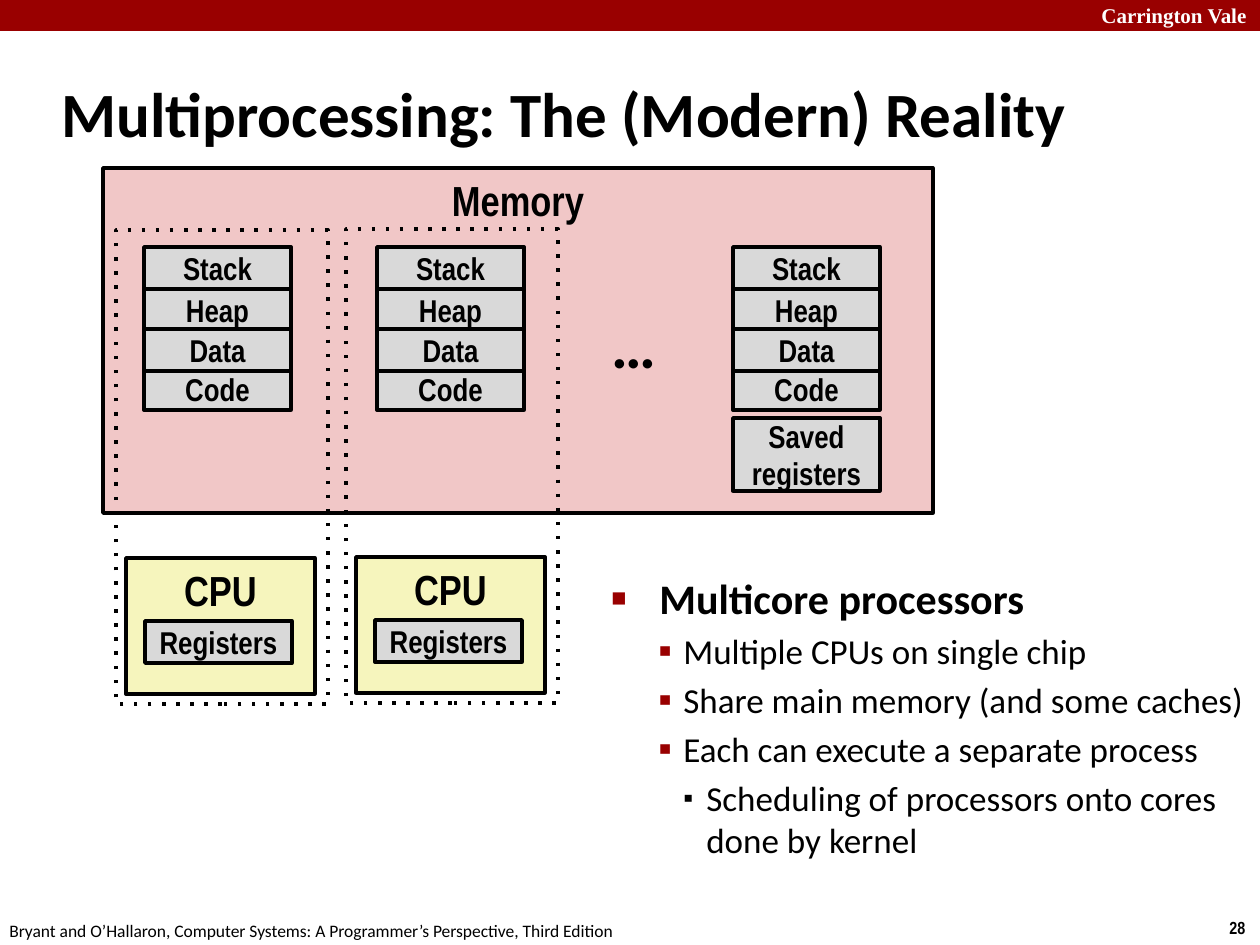
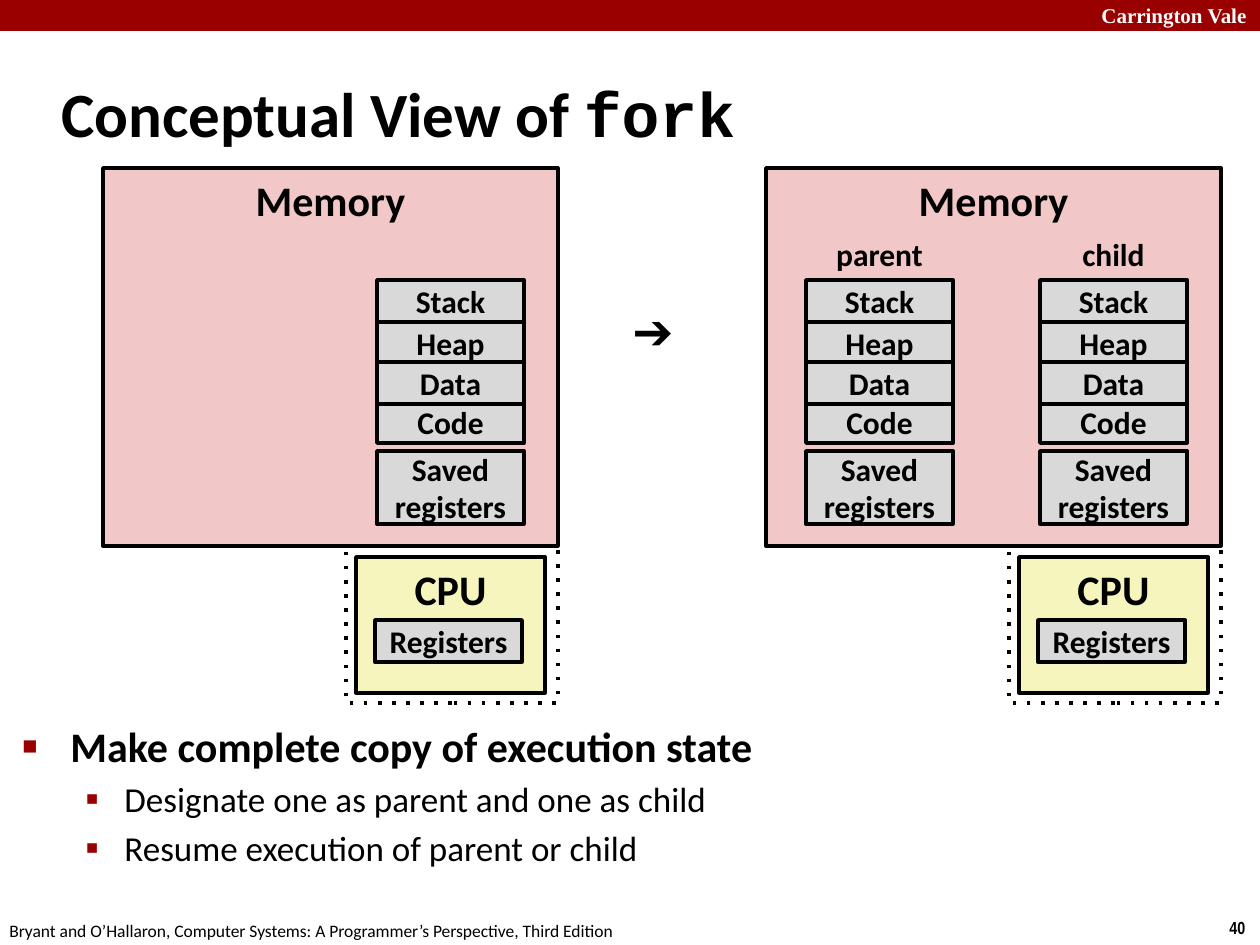
from dataclasses import dataclass

from lxml.etree import SubElement
from pptx import Presentation
from pptx.dml.color import RGBColor
from pptx.enum.shapes import MSO_SHAPE
from pptx.enum.text import MSO_ANCHOR, PP_ALIGN
from pptx.oxml.ns import qn
from pptx.util import Pt

EMU_PER_PX = 914400 / 126


@dataclass(frozen=True)
class Theme:
    """Colours, fonts and type sizes shared by the slides."""
    band: str = "990000"
    ink: str = "000000"
    paper: str = "FFFFFF"
    memory: str = "F1C7C7"
    cpu: str = "F6F5BD"
    segment: str = "D9D9D9"
    body_font: str = "Calibri"
    narrow_font: str = "Arial Narrow"
    code_font: str = "Courier New"
    band_font: str = "Times New Roman"
    symbol_font: str = "Arial"
    title_size: int = 36
    heading_size: int = 24
    item_size: int = 20
    label_size: int = 18
    arrow_size: int = 28
    band_size: int = 12
    footer_size: int = 10
    line_width: int = 2


@dataclass(frozen=True)
class Box:
    """A rectangle in px."""
    left: int
    top: int
    width: int
    height: int

    def inner(self, left, top, width, height):
        """Return a box placed relative to this one."""
        return Box(self.left + left, self.top + top, width, height)

    def emu(self):
        """Return left, top, width and height in EMU."""
        return [px(n) for n in (self.left, self.top, self.width, self.height)]


@dataclass(frozen=True)
class BulletStyle:
    """Look of one bullet level; margin and hang are in px."""
    symbol: str
    percent: int
    color: str
    size: int
    bold: bool
    margin: int
    hang: int


THEME = Theme()
PAGE = Box(0, 0, 1260, 945)
FOOTER = ("Bryant and O’Hallaron, Computer Systems: "
          "A Programmer’s Perspective, Third Edition")
SEGMENT_WIDTH, SEGMENT_HEIGHT = 147, 42
SEGMENT_OFFSETS = {"Stack": 0, "Heap": 42, "Code": 121, "Data": 82}
SAVED_OFFSET, SAVED_HEIGHT = 171, 73
CORE_SIZE = (212, 474)


def px(length):
    """Turn px into EMU."""
    return round(length * EMU_PER_PX)


def add_run(paragraph, text, size, font=THEME.body_font, bold=True, color=THEME.ink):
    """Append one formatted run."""
    run = paragraph.add_run()
    run.text = text
    run.font.size = Pt(size)
    run.font.name = font
    run.font.bold = bold
    run.font.color.rgb = RGBColor.from_string(color)


def add_text(slide, box, wrap=True, align=PP_ALIGN.LEFT, anchor=MSO_ANCHOR.TOP):
    """Add a text box and return its text frame."""
    frame = slide.shapes.add_textbox(*box.emu()).text_frame
    frame.word_wrap = wrap
    frame.vertical_anchor = anchor
    frame.paragraphs[0].alignment = align
    return frame


def add_rectangle(slide, box, fill=None, outlined=True):
    """Add a plain rectangle, with or without fill and outline."""
    shape = slide.shapes.add_shape(MSO_SHAPE.RECTANGLE, *box.emu())
    shape.shadow.inherit = False
    if fill:
        shape.fill.solid()
        shape.fill.fore_color.rgb = RGBColor.from_string(fill)
    else:
        shape.fill.background()
    if outlined:
        shape.line.color.rgb = RGBColor.from_string(THEME.ink)
        shape.line.width = Pt(THEME.line_width)
    else:
        shape.line.fill.background()
    return shape


def add_block(slide, box, text, fill, font, size=THEME.label_size,
              anchor=MSO_ANCHOR.MIDDLE):
    """Add an outlined rectangle with a centred bold label."""
    frame = add_rectangle(slide, box, fill).text_frame
    frame.word_wrap = True
    frame.vertical_anchor = anchor
    paragraph = frame.paragraphs[0]
    paragraph.alignment = PP_ALIGN.CENTER
    add_run(paragraph, text, size, font)


def add_memory(slide, box, font):
    """Draw the memory area with its heading."""
    add_block(slide, box, "Memory", THEME.memory, font, THEME.heading_size,
              MSO_ANCHOR.TOP)


def add_process(slide, left, top, font, saved):
    """Stack the segments of one process, with saved registers if asked."""
    box = Box(left, top, SEGMENT_WIDTH, SAVED_OFFSET + SAVED_HEIGHT)
    for name, offset in SEGMENT_OFFSETS.items():
        add_block(slide, box.inner(0, offset, box.width, SEGMENT_HEIGHT), name,
                  THEME.segment, font)
    if saved:
        add_block(slide, box.inner(0, SAVED_OFFSET, box.width, SAVED_HEIGHT),
                  "Saved registers", THEME.segment, font)


def add_core(slide, left, top, font):
    """Draw a dotted frame with a CPU and its registers."""
    box = Box(left, top, *CORE_SIZE)
    frame = add_rectangle(slide, box)
    outline = frame.line.fill._xPr
    SubElement(outline, qn("a:prstDash"), val="dot")
    add_block(slide, box.inner(10, 328, 189, 136), "CPU", THEME.cpu, font,
              THEME.heading_size, MSO_ANCHOR.TOP)
    add_block(slide, box.inner(29, 391, SEGMENT_WIDTH, SEGMENT_HEIGHT), "Registers",
              THEME.segment, font)


def add_machine(slide, box, processes):
    """Draw a core below a memory that holds labelled processes."""
    font = THEME.body_font
    add_core(slide, box.left + 243, box.top + 61, font)
    add_memory(slide, box, font)
    for offset, label in processes:
        add_process(slide, box.left + offset, box.top + 112, font, saved=True)
        if label:
            frame = add_text(slide, box.inner(offset, 61, SEGMENT_WIDTH, 50),
                             align=PP_ALIGN.CENTER)
            add_run(frame.paragraphs[0], label, THEME.label_size)


def format_bullet(paragraph, style):
    """Give a paragraph its indent, spacing and bullet."""
    properties = paragraph._p.get_or_add_pPr()
    properties.set("marL", str(px(style.margin)))
    properties.set("indent", str(-px(style.hang)))
    spacing = SubElement(properties, qn("a:spcBef"))
    SubElement(spacing, qn("a:spcPct"), val="20000")
    color = SubElement(properties, qn("a:buClr"))
    SubElement(color, qn("a:srgbClr"), val=style.color)
    SubElement(properties, qn("a:buSzPct"), val=str(style.percent * 1000))
    SubElement(properties, qn("a:buFont"), typeface=THEME.symbol_font)
    SubElement(properties, qn("a:buChar"), char=style.symbol)


def bullet_styles(margin, hang):
    """Return the three bullet levels for a given second-level indent."""
    return (
        BulletStyle("■", 60, THEME.band, THEME.heading_size, True, 48, 48),
        BulletStyle("▪", 110, THEME.band, THEME.item_size, False, margin, hang),
        BulletStyle("▪", 80, THEME.ink, THEME.item_size, False, 95, 23),
    )


def add_bullets(slide, box, items, styles):
    """Fill a box with (level, text) bullets."""
    frame = add_text(slide, box)
    for index, (level, text) in enumerate(items):
        paragraph = frame.add_paragraph() if index else frame.paragraphs[0]
        paragraph.level = level
        style = styles[level]
        format_bullet(paragraph, style)
        add_run(paragraph, text, style.size, bold=style.bold)


def add_page(presentation, number, title_runs):
    """Add a slide with band, footer, number and title."""
    slide = presentation.slides.add_slide(presentation.slide_layouts[6])
    add_rectangle(slide, PAGE.inner(0, 0, PAGE.width, 31), THEME.band, outlined=False)
    school = add_text(slide, PAGE.inner(1089, -4, 180, 38))
    add_run(school.paragraphs[0], "Carrington Vale", THEME.band_size,
            THEME.band_font, color=THEME.paper)
    page_number = add_text(slide, PAGE.inner(1217, 911, 43, 34), wrap=False)
    add_run(page_number.paragraphs[0], str(number), THEME.footer_size,
            THEME.narrow_font)
    footer = add_text(slide, PAGE.inner(-3, 914, 640, 34), wrap=False)
    add_run(footer.paragraphs[0], FOOTER, THEME.footer_size, bold=False)
    title = add_text(slide, PAGE.inner(49, 60, 1169, 105), anchor=MSO_ANCHOR.MIDDLE)
    for text, font in title_runs:
        add_run(title.paragraphs[0], text, THEME.title_size, font)
    return slide


def build_multiprocessing(presentation):
    """Build the slide on multicore processors sharing a memory."""
    slide = add_page(presentation, 28,
                     [("Multiprocessing: The (Modern) Reality", THEME.body_font)])
    font = THEME.narrow_font
    memory = Box(103, 168, 830, 345)
    add_memory(slide, memory, font)
    for offset, saved in ((41, False), (274, False), (630, True)):
        add_process(slide, memory.left + offset, memory.top + 79, font, saved)
    ellipsis = add_text(slide, memory.inner(496, 131, 71, 89), wrap=False)
    add_run(ellipsis.paragraphs[0], "…", THEME.title_size)
    for left, top in ((116, 230), (346, 229)):
        add_core(slide, left, top, font)
    add_bullets(slide, Box(599, 566, 683, 368), [
        (0, "Multicore processors"),
        (1, "Multiple CPUs on single chip"),
        (1, "Share main memory (and some caches)"),
        (1, "Each can execute a separate process"),
        (2, "Scheduling of processors onto cores done by kernel"),
    ], bullet_styles(72, 25))


def build_fork(presentation):
    """Build the slide that shows memory before and after fork."""
    slide = add_page(presentation, 40, [("Conceptual View of ", THEME.body_font),
                                        ("fork", THEME.code_font)])
    before = Box(103, 168, 455, 378)
    add_machine(slide, before, [(274, None)])
    add_machine(slide, before.inner(663, 0, before.width, before.height),
                [(40, "parent"), (274, "child")])
    arrow = add_text(slide, Box(620, 294, 78, 72), wrap=False)
    add_run(arrow.paragraphs[0], "➔", THEME.arrow_size, THEME.symbol_font)
    add_bullets(slide, Box(10, 714, 1089, 183), [
        (0, "Make complete copy of execution state"),
        (1, "Designate one as parent and one as child"),
        (1, "Resume execution of parent or child"),
    ], bullet_styles(102, 39))


def main():
    """Build and save the presentation."""
    presentation = Presentation()
    presentation.slide_width = px(PAGE.width)
    presentation.slide_height = px(PAGE.height)
    build_multiprocessing(presentation)
    build_fork(presentation)
    presentation.save("out.pptx")


if __name__ == "__main__":
    main()
